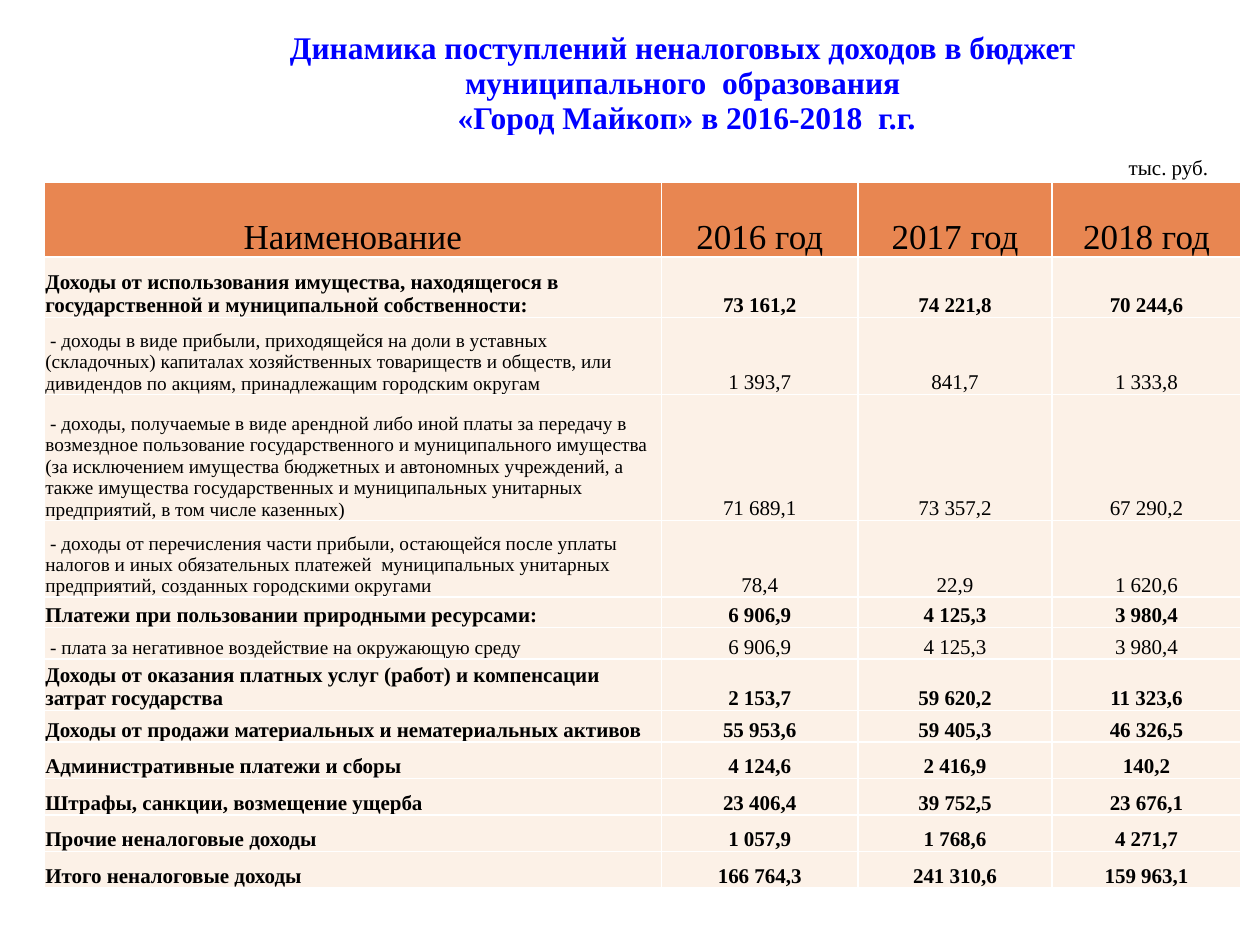
from lxml import etree
from pptx import Presentation
from pptx.dml.color import RGBColor
from pptx.enum.text import MSO_ANCHOR, PP_ALIGN
from pptx.oxml.ns import qn
from pptx.util import Inches, Pt

LEFT, CENTER = PP_ALIGN.LEFT, PP_ALIGN.CENTER
BOTTOM = MSO_ANCHOR.BOTTOM
FACE = "Times New Roman"

TITLE = [
    "Динамика поступлений неналоговых доходов в бюджет ",
    "муниципального  образования ",
    "«Город Майкоп» в 2016-2018  г.г.",
]
UNIT = "тыс. руб."
COLS = [4.9, 1.56, 1.54, 1.5]
HEAD = (0.59, "Наименование", "2016 год", "2017 год", "2018 год")
ROWS = [
    (0.48, "Доходы от использования имущества, находящегося в государственной и муниципальной собственности:",
     "73 161,2", "74 221,8", "70 244,6"),
    (0.61, " - доходы в виде прибыли, приходящейся на доли в уставных (складочных) капиталах "
     "хозяйственных товариществ и обществ, или дивидендов по акциям, принадлежащим городским округам",
     "1 393,7", "841,7", "1 333,8"),
    (1, " - доходы, получаемые в виде арендной либо иной платы за передачу в возмездное пользование "
     "государственного и муниципального имущества (за исключением имущества бюджетных и автономных "
     "учреждений, а также имущества государственных и муниципальных унитарных предприятий, "
     "в том числе казенных)",
     "71 689,1", "73 357,2", "67 290,2"),
    (0.61, " - доходы от перечисления части прибыли, остающейся после уплаты налогов и иных "
     "обязательных платежей  муниципальных унитарных предприятий, созданных городскими округами",
     "78,4", "22,9", "1 620,6"),
    (0.24, "Платежи при пользовании природными ресурсами:", "6 906,9", "4 125,3", "3 980,4"),
    (0.25, " - плата за негативное воздействие на окружающую среду", "6 906,9", "4 125,3", "3 980,4"),
    (0.41, "Доходы от оказания платных услуг (работ) и компенсации затрат государства",
     "2 153,7", "59 620,2", "11 323,6"),
    (0.25, "Доходы от продажи материальных и нематериальных активов", "55 953,6", "59 405,3", "46 326,5"),
    (0.29, "Административные платежи и сборы", "4 124,6", "2 416,9", "140,2"),
    (0.29, "Штрафы, санкции, возмещение ущерба", "23 406,4", "39 752,5", "23 676,1"),
    (0.29, "Прочие неналоговые доходы", "1 057,9", "1 768,6", "4 271,7"),
    (0.29, "Итого неналоговые доходы", "166 764,3", "241 310,6", "159 963,1"),
]


def paint(fmt, tone):
    fmt.solid()
    fmt.fore_color.rgb = RGBColor.from_string(tone)


def style(par, size, bold=False, tone="000000", align=LEFT):
    par.alignment = align
    font = par.font
    font.name, font.size, font.bold = FACE, Pt(size), bold
    paint(font.fill, tone)


def edge(cell):
    props = cell._tc.get_or_add_tcPr()
    for spot, side in enumerate(("a:lnL", "a:lnR", "a:lnT", "a:lnB")):
        line = etree.Element(qn(side), w=str(Pt(1)))
        fill = etree.SubElement(line, qn("a:solidFill"))
        etree.SubElement(fill, qn("a:srgbClr"), val="FFFFFF")
        props.insert(spot, line)


def fit(cell, text, tone=None):
    cell.text = text
    cell.margin_left = cell.margin_right = cell.margin_top = Inches(0.01)
    cell.margin_bottom = 0
    cell.vertical_anchor = BOTTOM
    if tone:
        paint(cell.fill, tone)
    else:
        cell.fill.background()
    edge(cell)


def grid(slide, left, top, cols, rows):
    table = slide.shapes.add_table(
        len(rows), len(cols), Inches(left), Inches(top), Inches(sum(cols)), Inches(sum(rows))
    ).table
    for col, width in zip(table.columns, cols):
        col.width = Inches(width)
    for row, height in zip(table.rows, rows):
        row.height = Inches(height)
    return table


def main():
    deck = Presentation()
    deck.slide_width, deck.slide_height = Inches(10), Inches(7.5)
    slide = deck.slides.add_slide(deck.slide_layouts[6])

    title = grid(slide, 0.9, 0.13, [9.1], [0.95]).cell(0, 0)
    fit(title, "\n".join(TITLE))
    for par in title.text_frame.paragraphs:
        style(par, 18, True, "0000FF", CENTER)

    note = slide.shapes.add_textbox(Inches(8.86), Inches(1.18), Inches(0.91), Inches(0.3))
    note.text_frame.word_wrap = True
    note.text_frame.text = UNIT
    style(note.text_frame.paragraphs[0], 12)

    data = [HEAD] + ROWS
    table = grid(slide, 0.35, 1.45, COLS, [row[0] for row in data])
    for r, (_, *texts) in enumerate(data):
        head = r == 0
        sub = texts[0].startswith(" -")
        for c, text in enumerate(texts):
            cell = table.cell(r, c)
            fit(cell, text, "E88651" if head else "FCF1E7")
            size = 20 if head else 11 if sub and c == 0 else 12
            align = CENTER if head or c else LEFT
            style(cell.text_frame.paragraphs[0], size, not (head or sub), align=align)

    deck.save("out.pptx")


if __name__ == "__main__":
    main()
